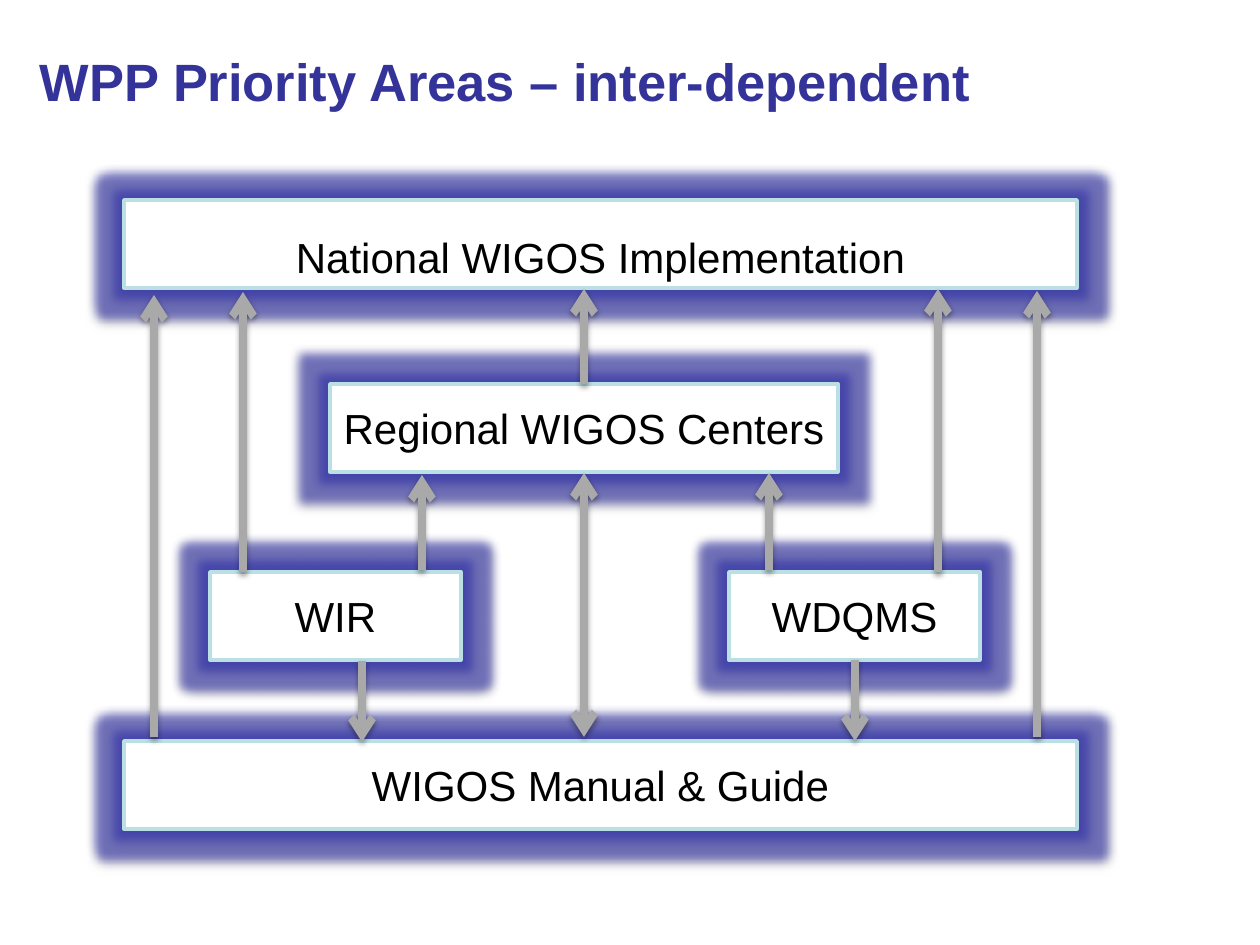
import pptx
import pptx.dml.color
import pptx.enum.shapes
import pptx.enum.text
import pptx.oxml
import pptx.oxml.ns
import pptx.util

COLORS = {
    "title": "333399",
    "text": "000000",
    "box": "FFFFFF",
    "border": "BBE0E3",
    "arrow": "A9A9A9",
    "glow": "3333AA",
    "shadow": "000000",
}
GLOW = '<a:glow rad="139700"><a:srgbClr val="{glow}"><a:alpha val="60000"/></a:srgbClr></a:glow>'
SHADOW = (
    '<a:outerShdw blurRad="38100" dist="22860" dir="5400000" rotWithShape="0">'
    '<a:srgbClr val="{shadow}"><a:alpha val="35000"/></a:srgbClr></a:outerShdw>'
)
ANCHOR = pptx.enum.text.MSO_ANCHOR
ALIGN = pptx.enum.text.PP_ALIGN


def px(length):
    return pptx.util.Emu(round(length * 914400 / 126))


def rgb(name):
    return pptx.dml.color.RGBColor.from_string(COLORS[name])


class Diagram:
    font = "Arial"
    inset = 6

    def __init__(self, slide):
        self.slide = slide

    def label(self, holder, wording, anchor, align, color, **font_format):
        frame = holder.text_frame
        margins = dict.fromkeys(
            ("margin_left", "margin_top", "margin_right", "margin_bottom"), px(self.inset))
        for name, value in {**margins, "word_wrap": True, "vertical_anchor": anchor}.items():
            setattr(frame, name, value)
        paragraph = frame.paragraphs[0]
        paragraph.alignment = align
        run = paragraph.add_run()
        run.text = wording
        for name, value in {"name": self.font, **font_format}.items():
            setattr(run.font, name, value)
        run.font.color.rgb = rgb(color)

    def add_effects(self, element, effects):
        namespace = pptx.oxml.ns.nsdecls("a")
        xml = f"<a:effectLst {namespace}>{effects.format(**COLORS)}</a:effectLst>"
        element.spPr.append(pptx.oxml.parse_xml(xml))

    def title(self, wording, left, top, width, height):
        heading = self.slide.shapes.add_textbox(px(left), px(top), px(width), px(height))
        self.label(heading, wording, ANCHOR.MIDDLE, ALIGN.LEFT, "title",
                   size=pptx.util.Pt(30), bold=True)

    def box(self, wording, left, top, width, height=88, anchor=ANCHOR.MIDDLE):
        area = self.slide.shapes.add_shape(
            pptx.enum.shapes.MSO_SHAPE.RECTANGLE, px(left), px(top), px(width), px(height))
        area.fill.solid()
        area.fill.fore_color.rgb = rgb("box")
        area.line.color.rgb = rgb("border")
        area.line.width = pptx.util.Pt(2)
        self.add_effects(area._element, GLOW + SHADOW)
        self.label(area, wording, anchor, ALIGN.CENTER, "text", size=pptx.util.Pt(24))

    def arrow(self, x, start, end, both_ways=False):
        link = self.slide.shapes.add_connector(
            pptx.enum.shapes.MSO_CONNECTOR.STRAIGHT, px(x), px(start), px(x), px(end))
        link.line.color.rgb = rgb("arrow")
        link.line.width = pptx.util.Pt(4.5)
        outline = link._element.spPr.find(pptx.oxml.ns.qn("a:ln"))
        for end_name in ("headEnd", "tailEnd") if both_ways else ("tailEnd",):
            outline.append(pptx.oxml.parse_xml(
                f'<a:{end_name} {pptx.oxml.ns.nsdecls("a")} type="arrow"/>'))
        self.add_effects(link._element, SHADOW)


def main():
    deck = pptx.Presentation()
    deck.slide_width, deck.slide_height = px(1260), px(945)
    diagram = Diagram(deck.slides.add_slide(deck.slide_layouts[6]))

    diagram.title("WPP Priority Areas – inter-dependent", 34, 0, 1201, 161)

    diagram.box("National WIGOS Implementation", 124, 200, 953, anchor=ANCHOR.BOTTOM)
    diagram.box("Regional WIGOS Centers", 330, 384, 508)
    diagram.box("WIGOS Manual & Guide", 124, 741, 953)
    for tool, left in (("WIR", 210), ("WDQMS", 729)):
        diagram.box(tool, left, 572, 251)

    manual_to_national = ((1037, 737, 291), (154, 737, 295))
    tools_to_manual = ((855, 660, 741), (362, 661, 742))
    tools_to_regional = ((769, 570, 473), (422, 570, 475))
    tools_to_national = ((243, 572, 292), (938, 572, 289))
    regional_to_national = ((584, 384, 289),)
    for route in (manual_to_national, tools_to_manual, tools_to_regional,
                  tools_to_national, regional_to_national):
        for x, start, end in route:
            diagram.arrow(x, start, end)
    diagram.arrow(584, 473, 737, both_ways=True)

    deck.save("out.pptx")


if __name__ == "__main__":
    main()
